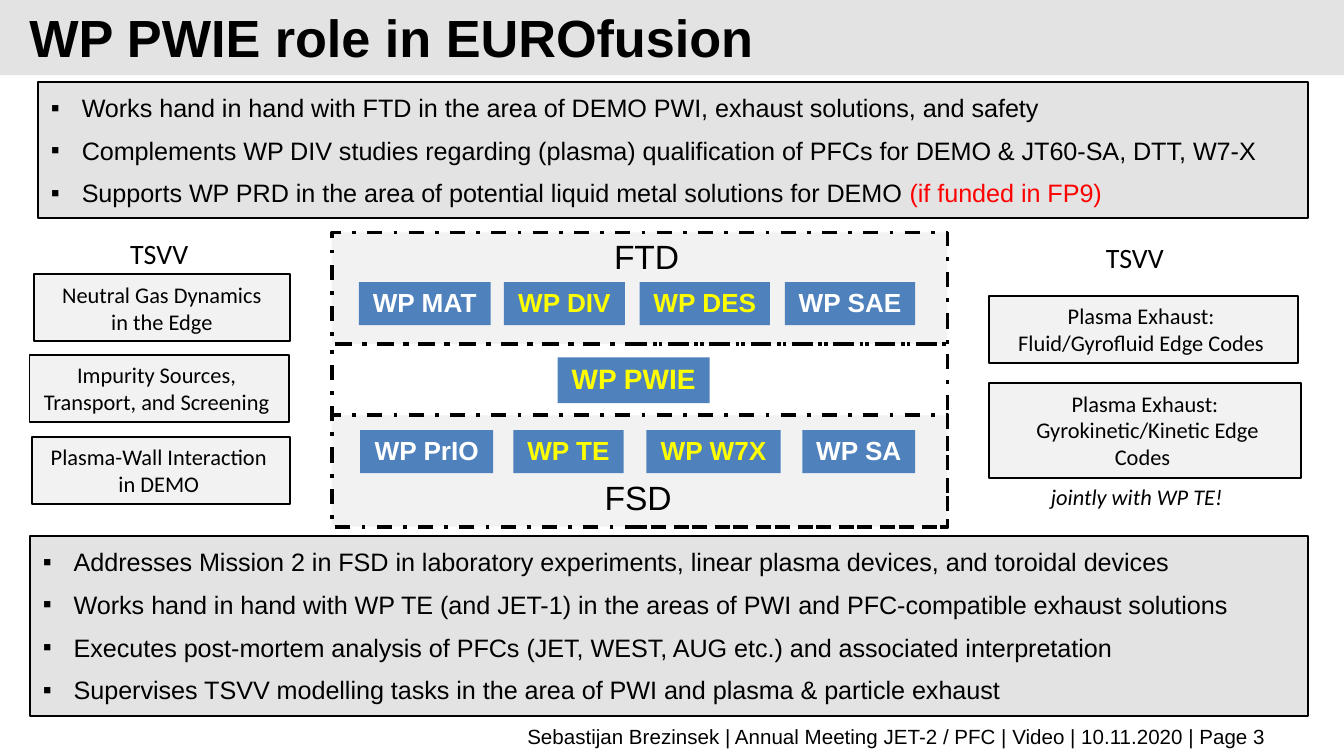
from typing import NamedTuple

from lxml import etree
from pptx import Presentation
from pptx import util as u
from pptx.dml.color import RGBColor
from pptx.enum import dml, shapes, text
from pptx.oxml import ns

BLACK, WHITE, YELLOW, RED = "000000", "FFFFFF", "FFFF00", "FF0000"
BLUE, GREY, PALE = "4F81BD", "E3E3E3", "F2F2F2"
CENTER, LEFT, RIGHT = text.PP_ALIGN.CENTER, text.PP_ALIGN.LEFT, text.PP_ALIGN.RIGHT
TOP, MIDDLE = text.MSO_ANCHOR.TOP, text.MSO_ANCHOR.MIDDLE


class Box(NamedTuple):
    left: float
    top: float
    width: float
    height: float


class Badge(NamedTuple):
    label: str
    left: float
    width: float
    color: str


class Task(NamedTuple):
    box: Box
    lines: list[str]


class Label(NamedTuple):
    words: str
    box: Box
    size: float
    font: str
    italic: bool = False


class Panel(NamedTuple):
    box: Box
    points: list[list[tuple[str, str]]]


def rgb(value: str) -> RGBColor:
    return RGBColor.from_string(value)


def inches(box: Box) -> list[u.Length]:
    return [u.Inches(value) for value in box]


def add_rect(box: Box, fill: str | None = None, line: float = 0, dashed: bool = False):
    rect = slide.shapes.add_shape(shapes.MSO_SHAPE.RECTANGLE, *inches(box))
    rect.shadow.inherit = False
    if fill:
        rect.fill.solid()
        rect.fill.fore_color.rgb = rgb(fill)
    else:
        rect.fill.background()
    if line:
        rect.line.color.rgb = rgb(BLACK)
        rect.line.width = u.Pt(line)
        if dashed:
            rect.line.dash_style = dml.MSO_LINE.DASH_DOT
    else:
        rect.line.fill.background()
    return rect


def add_bullet(paragraph) -> None:
    properties = paragraph._p.get_or_add_pPr()
    properties.set("marL", str(u.Inches(0.23)))
    properties.set("indent", str(-u.Inches(0.23)))
    etree.SubElement(properties, ns.qn("a:buFont")).set("typeface", "Arial")
    etree.SubElement(properties, ns.qn("a:buChar")).set("char", "▪")


def write(shape, paragraphs: list[list[tuple[str, str]]], *, size: float,
          font: str = "Arial", bold: bool = False, italic: bool = False,
          align=LEFT, anchor=TOP, wrap: bool = True, grow: bool = True,
          spacing=None, after: float = 0, bullets: bool = False) -> None:
    """Each paragraph is a list of (words, colour) runs."""
    frame = shape.text_frame
    frame.word_wrap = wrap
    frame.vertical_anchor = anchor
    frame.auto_size = (text.MSO_AUTO_SIZE.SHAPE_TO_FIT_TEXT if grow
                       else text.MSO_AUTO_SIZE.NONE)
    for index, runs in enumerate(paragraphs):
        paragraph = frame.add_paragraph() if index else frame.paragraphs[0]
        if bullets:
            add_bullet(paragraph)
        paragraph.alignment = align
        if spacing:
            paragraph.line_spacing = spacing
        if after:
            paragraph.space_after = u.Pt(after)
        for words, color in runs:
            run = paragraph.add_run()
            run.text = words
            run.font.name = font
            run.font.size = u.Pt(size)
            run.font.bold = bold
            run.font.italic = italic
            run.font.color.rgb = rgb(color)


def add_badge(badge: Badge, top: float, height: float = 0.32, size: float = 14) -> None:
    rect = add_rect(Box(badge.left, top, badge.width, height), BLUE)
    write(rect, [[(badge.label, badge.color)]], size=size, bold=True,
          align=CENTER, anchor=MIDDLE, wrap=False, spacing=0.95)


def add_label(label: Label) -> None:
    write(slide.shapes.add_textbox(*inches(label.box)), [[(label.words, BLACK)]],
          size=label.size, font=label.font, italic=label.italic,
          wrap=False, spacing=0.95)


def add_task(task: Task) -> None:
    write(add_rect(task.box, PALE, line=1), [[(line, BLACK)] for line in task.lines],
          size=12, font="Calibri", align=CENTER)


def add_panel(panel: Panel) -> None:
    write(add_rect(panel.box, GREY, line=1), panel.points, size=13.5,
          spacing=1.13, after=4.5, bullets=True)


# Widescreen 16:9 page
prs = Presentation()
prs.slide_width = u.Inches(10)
prs.slide_height = u.Inches(10 * 9 / 16)
slide = prs.slides.add_slide(prs.slide_layouts[6])

# Title band
add_rect(Box(0, 0, 10, 0.56), GREY)
title = slide.shapes.add_textbox(*inches(Box(0.12, 0.09, 8.63, 0.38)))
write(title, [[("WP PWIE role in EUROfusion", BLACK)]], size=28, bold=True,
      anchor=MIDDLE, grow=False, spacing=u.Pt(32))

# Department frames: FSD, FTD and the one shared by PWIE and FSD
add_rect(Box(2.47, 3.09, 4.58, 0.83), PALE, line=2, dashed=True)
add_rect(Box(2.47, 1.73, 4.58, 0.83), PALE, line=2, dashed=True)
add_rect(Box(2.47, 2.56, 4.58, 1.36), line=2, dashed=True)

# Work packages
FTD_PACKAGES = [
    Badge("WP MAT", 2.67, 0.98, WHITE),
    Badge("WP DIV", 3.75, 0.9, YELLOW),
    Badge("WP DES", 4.76, 0.97, YELLOW),
    Badge("WP SAE", 5.84, 0.97, WHITE),
]
FSD_PACKAGES = [
    Badge("WP PrIO", 2.68, 0.99, WHITE),
    Badge("WP TE", 3.82, 0.82, YELLOW),
    Badge("WP W7X", 4.81, 1, YELLOW),
    Badge("WP SA", 5.97, 0.84, WHITE),
]
for packages, row_top in ((FTD_PACKAGES, 2.1), (FSD_PACKAGES, 3.2)):
    for package in packages:
        add_badge(package, row_top)
add_badge(Badge("WP PWIE", 4.15, 1.13, YELLOW), 2.66, height=0.34, size=15)

# Modelling tasks on both sides
TASKS = [
    Task(Box(0.25, 2.04, 1.91, 0.5), ["Neutral Gas Dynamics", " in the Edge "]),
    Task(Box(0.22, 2.64, 1.93, 0.5), ["Impurity Sources, ", "Transport, and Screening "]),
    Task(Box(0.24, 3.25, 1.92, 0.5), ["Plasma-Wall Interaction ", "in DEMO "]),
    Task(Box(7.36, 2.2, 2.3, 0.5), ["Plasma Exhaust: ", "Fluid/Gyrofluid Edge Codes "]),
    Task(Box(7.36, 2.85, 2.32, 0.71),
         ["Plasma Exhaust:", " Gyrokinetic/Kinetic Edge Codes "]),
]
for task in TASKS:
    add_task(task)

# Free labels
LABELS = [
    Label("FTD", Box(4.47, 1.73, 0.69, 0.39), 18, "Arial"),
    Label("FSD", Box(4.4, 3.52, 0.71, 0.39), 18, "Arial"),
    Label("TSVV", Box(0.87, 1.73, 0.64, 0.34), 15, "Calibri"),
    Label("TSVV", Box(8.13, 1.76, 0.64, 0.34), 15, "Calibri"),
    Label("jointly with WP TE!", Box(7.72, 3.56, 1.49, 0.29), 12, "Calibri", italic=True),
]
for label in LABELS:
    add_label(label)

# Role panels
add_panel(Panel(Box(0.28, 0.61, 9.45, 1.01), [
    [("Works hand in hand with FTD in the area of DEMO PWI, exhaust solutions, and safety", BLACK)],
    [("Complements WP DIV studies regarding (plasma) qualification of PFCs for DEMO & JT60-SA, DTT, W7-X", BLACK)],
    [("Supports WP PRD in the area of potential liquid metal solutions for DEMO ", BLACK),
     ("(if funded in FP9)", RED)],
]))
add_panel(Panel(Box(0.22, 3.99, 9.51, 1.34), [
    [("Addresses Mission 2 in FSD in laboratory experiments, linear plasma devices, and toroidal devices", BLACK)],
    [("Works hand in hand with WP TE (and JET-1) in the areas of PWI and PFC-compatible exhaust solutions", BLACK)],
    [("Executes post-mortem analysis of PFCs (JET, WEST, AUG etc.) and associated interpretation", BLACK)],
    [("Supervises TSVV modelling tasks in the area of PWI and plasma & particle exhaust", BLACK)],
]))

# Footer
footer = slide.shapes.add_textbox(*inches(Box(0.51, 5.37, 9.01, 0.22)))
write(footer, [[("Sebastijan Brezinsek | Annual Meeting JET-2 / PFC | Video | 10.11.2020 | Page 3", BLACK)]],
      size=11, align=RIGHT, anchor=MIDDLE, grow=False)

prs.save("out.pptx")
